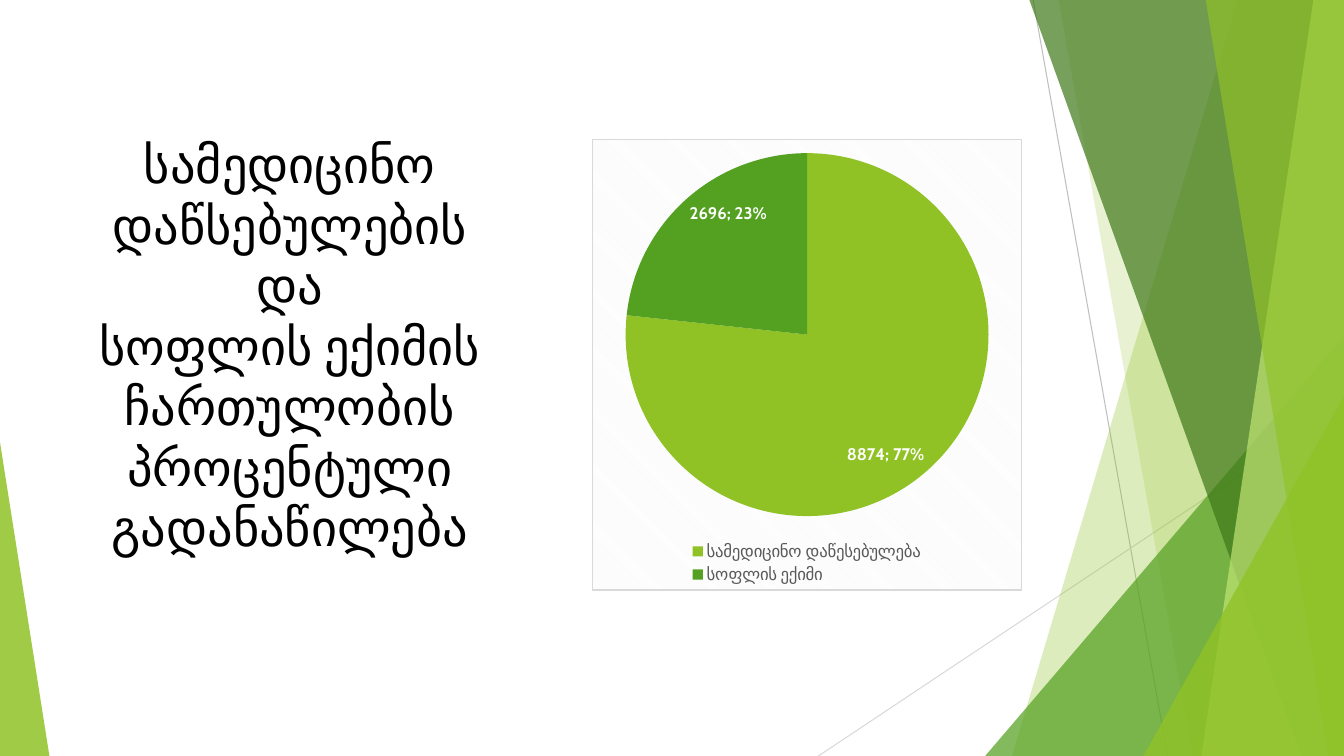
"""Build a slide with a title, a two-part pie chart and green facets."""
from lxml import etree
from pptx import Presentation
from pptx.chart.data import CategoryChartData
from pptx.dml.color import RGBColor
from pptx.enum.chart import XL_CHART_TYPE as ChartType
from pptx.enum.chart import XL_LABEL_POSITION as LabelPosition
from pptx.enum.chart import XL_LEGEND_POSITION as LegendPosition
from pptx.enum.shapes import MSO_CONNECTOR as Connector
from pptx.enum.shapes import MSO_SHAPE as Preset
from pptx.enum.text import MSO_ANCHOR as Anchor
from pptx.enum.text import PP_ALIGN as Align
from pptx.oxml import parse_xml
from pptx.oxml.ns import qn
from pptx.util import Pt

BLACK = RGBColor(0x00, 0x00, 0x00)
WHITE = RGBColor(0xFF, 0xFF, 0xFF)
LEGEND_GREY = RGBColor(0x59, 0x59, 0x59)
MID_GREY = RGBColor(0xBF, 0xBF, 0xBF)
PALE_GREY = RGBColor(0xD9, 0xD9, 0xD9)
HATCH_GREY = RGBColor(0xF2, 0xF2, 0xF2)
LIME = RGBColor(0x90, 0xC2, 0x26)
GREEN = RGBColor(0x54, 0xA0, 0x21)
DARK_GREEN = RGBColor(0x3F, 0x78, 0x19)
PALE_LIME = RGBColor(0xC0, 0xE4, 0x74)
WIDTH, HEIGHT, TOP = 960, 540, -0.6
NAMESPACES = (
    'xmlns:c="http://schemas.openxmlformats.org/drawingml/2006/chart" '
    'xmlns:a="http://schemas.openxmlformats.org/drawingml/2006/main"'
)


class FacetSlide:
    """Holds the slide and its font, and draws each kind of element."""

    def __init__(self, slide, font_name):
        self.shapes = slide.shapes
        self.font_name = font_name

    def style_font(self, font, size, color, bold=False):
        font.name, font.size, font.bold = self.font_name, Pt(size), bold
        font.color.rgb = color

    def tint(self, shape, color, opacity):
        shape.shadow.inherit = False
        shape.line.fill.background()
        shape.fill.solid()
        shape.fill.fore_color.rgb = color
        color_node = shape.fill._xPr.find(qn("a:solidFill"))[0]
        etree.SubElement(color_node, qn("a:alpha"), val=str(opacity * 1000))

    def line(self, start, end, color):
        ray = self.shapes.add_connector(Connector.STRAIGHT, *map(Pt, start + end))
        ray.line.color.rgb = color
        ray.line.width = Pt(0.75)
        etree.SubElement(ray._element.spPr, qn("a:effectLst"))

    def facet(self, top_left, bottom_left, color, opacity):
        outline = self.shapes.build_freeform(Pt(top_left), Pt(TOP))
        corners = [(WIDTH, TOP), (WIDTH, HEIGHT), (bottom_left, HEIGHT)]
        outline.add_line_segments([(Pt(x), Pt(y)) for x, y in corners], close=True)
        self.tint(outline.convert_to_shape(), color, opacity)

    def triangle(self, left, top, width, apex, color, opacity):
        corner = self.shapes.add_shape(
            Preset.ISOSCELES_TRIANGLE, Pt(left), Pt(top), Pt(width), Pt(HEIGHT - top)
        )
        corner.adjustments[0] = apex
        self.tint(corner, color, opacity)

    def title(self, box, lines, size):
        frame = self.shapes.add_textbox(*map(Pt, box)).text_frame
        frame.word_wrap = True
        frame.vertical_anchor = Anchor.TOP
        frame.margin_top = Pt(47)
        paragraph = frame.paragraphs[0]
        paragraph.alignment = Align.CENTER
        for index, line in enumerate(lines):
            if index:
                paragraph.add_line_break()
            run = paragraph.add_run()
            run.text = line
            self.style_font(run.font, size, BLACK)

    def layout(self, x, y, w, h, inner=False):
        target = '<c:layoutTarget val="inner"/>' if inner else ""
        return parse_xml(
            f"<c:layout {NAMESPACES}><c:manualLayout>{target}"
            '<c:xMode val="edge"/><c:yMode val="edge"/>'
            f'<c:x val="{x}"/><c:y val="{y}"/><c:w val="{w}"/><c:h val="{h}"/>'
            "</c:manualLayout></c:layout>"
        )

    def pie(self, box, shares):
        data = CategoryChartData()
        data.categories = [category for category, _, _ in shares]
        data.add_series("Series 1", [value for _, value, _ in shares])
        chart = self.shapes.add_chart(ChartType.PIE, *map(Pt, box), data).chart
        chart.has_title = False
        self.style_font(chart.font, 10, BLACK)
        plot = chart.plots[0]
        plot.vary_by_categories = True
        series = plot.series[0]
        for index, (_, _, color) in enumerate(shares):
            slice_fill = series.points[index].format.fill
            slice_fill.solid()
            slice_fill.fore_color.rgb = color
        labels = series.data_labels
        labels.show_value = labels.show_percentage = True
        labels.position = LabelPosition.INSIDE_END
        self.style_font(labels.font, 12, WHITE, bold=True)
        separator = parse_xml(f"<c:separator {NAMESPACES}>; </c:separator>")
        labels._element.find(qn("c:showBubbleSize")).addnext(separator)

        chart.has_legend = True
        legend = chart.legend
        legend.position = LegendPosition.BOTTOM
        legend.include_in_layout = False
        self.style_font(legend.font, 12, LEGEND_GREY)
        self.place_parts(chart, legend)

    def place_parts(self, chart, legend):
        plot_area = chart._chartSpace.chart.plotArea
        for parent in (plot_area, legend._element):
            for old in parent.findall(qn("c:layout")):
                parent.remove(old)
        plot_area.insert(0, self.layout(0.077, 0.03, 0.847, 0.806, inner=True))
        legend_place = self.layout(0.22, 0.885, 0.56, 0.11)
        legend._element.find(qn("c:legendPos")).addnext(legend_place)
        backdrop = parse_xml(
            f"<c:spPr {NAMESPACES}>"
            '<a:pattFill prst="dkDnDiag">'
            f'<a:fgClr><a:srgbClr val="{HATCH_GREY}"/></a:fgClr>'
            f'<a:bgClr><a:srgbClr val="{WHITE}"/></a:bgClr></a:pattFill>'
            f'<a:ln w="{Pt(0.75)}"><a:solidFill><a:srgbClr val="{PALE_GREY}"/>'
            "</a:solidFill></a:ln></c:spPr>"
        )
        chart_node = chart._chartSpace.chart
        chart_node.addnext(backdrop)
        square = parse_xml(f'<c:roundedCorners {NAMESPACES} val="0"/>')
        chart_node.addprevious(square)


def main():
    deck = Presentation()
    deck.slide_width, deck.slide_height = Pt(WIDTH), Pt(HEIGHT)
    page = FacetSlide(deck.slides.add_slide(deck.slide_layouts[6]), "Cabin")

    page.line((738, 0), (834, HEIGHT), MID_GREY)
    page.line((WIDTH, 290), (584.6, HEIGHT), PALE_GREY)
    page.facet(884.2, 722.9, LIME, 30)
    page.facet(756, 851.8, LIME, 20)
    page.triangle(703.7, 240, 256.3, 1, GREEN, 72)
    for top_left, bottom_left, color, opacity in (
        (735.1, 929.5, DARK_GREEN, 70),
        (938.2, 858.2, PALE_LIME, 70),
        (861.1, 949, LIME, 65),
    ):
        page.facet(top_left, bottom_left, color, opacity)
    page.triangle(816.7, 283, 143.3, 1, LIME, 80)
    page.triangle(0, 316, 35.3, 0, LIME, 85)

    page.title(
        (53.3, 48.2, 307.4, 442.8),
        (
            "სამედიცინო დაწსებულების და",
            "სოფლის ექიმის ჩართულობის პროცენტული გადანაწილება",
        ),
        36,
    )
    page.pie(
        (422.8, 99.4, 307.2, 322.4),
        (("სამედიცინო დაწესებულება", 8874, LIME), ("სოფლის ექიმი", 2696, GREEN)),
    )
    deck.save("out.pptx")


if __name__ == "__main__":
    main()
